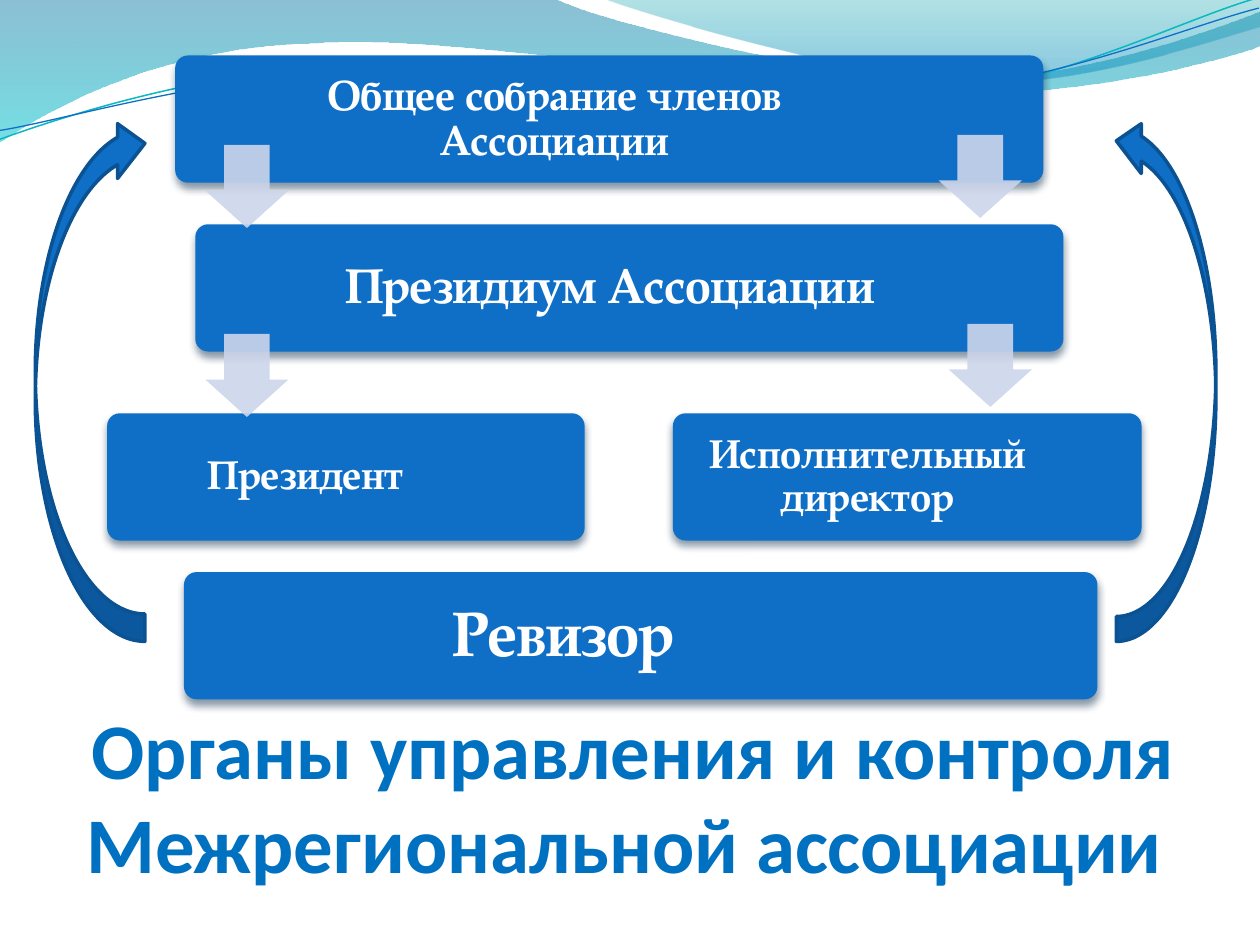
from lxml import etree
from pptx import Presentation
from pptx.dml.color import RGBColor
from pptx.enum.shapes import MSO_SHAPE
from pptx.enum.text import MSO_ANCHOR, PP_ALIGN
from pptx.oxml import parse_xml
from pptx.oxml.ns import qn
from pptx.util import Inches, Pt

ROUNDED = MSO_SHAPE.ROUNDED_RECTANGLE
DOWN_ARROW = MSO_SHAPE.DOWN_ARROW
CURVED_LEFT = MSO_SHAPE.CURVED_LEFT_ARROW
CURVED_RIGHT = MSO_SHAPE.CURVED_RIGHT_ARROW
CENTER = PP_ALIGN.CENTER
MIDDLE, BOTTOM = MSO_ANCHOR.MIDDLE, MSO_ANCHOR.BOTTOM

BLUE = RGBColor(0x0F, 0x6F, 0xC6)
DARK_BLUE = RGBColor(0x0B, 0x52, 0x92)
TITLE_BLUE = RGBColor(0x00, 0x70, 0xC0)
TURQUOISE = RGBColor(0x0A, 0xB8, 0xBF)
PALE_BLUE = RGBColor(0xCC, 0xD5, 0xEA)
WHITE = RGBColor(0xFF, 0xFF, 0xFF)
SHADOW = RGBColor(0x04, 0x27, 0x47)
WAVE_BLUE = RGBColor(0x00, 0x74, 0xA1)
WAVE_CYAN = RGBColor(0x00, 0xC6, 0xCF)
WAVE_TEAL = RGBColor(0x00, 0xA1, 0xA9)
WAVE_SKY = RGBColor(0x00, 0x8B, 0xBF)

DRAWING_NS = 'xmlns:a="http://schemas.openxmlformats.org/drawingml/2006/main"'


class SlideBuilder:
    body_font = "TeX Gyre Pagella"
    title_font = "Calibri"

    def __init__(self, slide):
        self.shapes = slide.shapes

    def outline(self, start, segments, closed):
        """Each segment is a line end (2 numbers) or a cubic curve (6 numbers)."""
        points = [(Inches(segment[i]), Inches(segment[i + 1]))
                  for segment in segments for i in range(0, len(segment), 2)]
        builder = self.shapes.build_freeform(Inches(start[0]), Inches(start[1]))
        builder.add_line_segments(points, close=closed)
        shape = builder.convert_to_shape()
        shape.shadow.inherit = False
        # Join each three points of a curve into one cubic segment
        lines = iter(list(shape.element.iter(qn("a:lnTo"))))
        for segment in segments:
            first = next(lines)
            if len(segment) == 6:
                first.tag = qn("a:cubicBezTo")
                for _ in range(2):
                    line = next(lines)
                    first.append(line[0])
                    line.getparent().remove(line)
        return shape

    def wave(self, start, segments, stops):
        shape = self.outline(start, segments, True)
        shape.line.fill.background()
        stop_xml = "".join(
            f'<a:gs pos="{position * 1000}"><a:srgbClr val="{color}">'
            f'<a:alpha val="{alpha * 1000}"/></a:srgbClr></a:gs>'
            for position, color, alpha in stops)
        gradient = parse_xml(f'<a:gradFill {DRAWING_NS}><a:gsLst>{stop_xml}</a:gsLst>'
                             '<a:lin ang="5400000" scaled="0"/></a:gradFill>')
        shape.element.spPr.find(qn("a:custGeom")).addnext(gradient)

    def thread(self, start, segments, color, width):
        shape = self.outline(start, segments, False)
        shape.rotation = 357.3
        shape.fill.background()
        shape.line.color.rgb = color
        shape.line.width = Pt(width)

    def preset(self, kind, box, color, adjustments=()):
        shape = self.shapes.add_shape(kind, *map(Inches, box))
        shape.shadow.inherit = False
        shape.fill.solid()
        shape.fill.fore_color.rgb = color
        shape.line.fill.background()
        for index, value in enumerate(adjustments):
            shape.adjustments[index] = value
        return shape

    def text(self, box, words, size, color, font, insets, anchor, spacing=None):
        frame = self.shapes.add_textbox(*map(Inches, box)).text_frame
        sides = ("margin_left", "margin_top", "margin_right", "margin_bottom")
        settings = {"word_wrap": True, "vertical_anchor": anchor}
        settings.update(zip(sides, map(Inches, insets)))
        for name, value in settings.items():
            setattr(frame, name, value)
        paragraph = frame.paragraphs[0]
        paragraph.alignment = CENTER
        paragraph.line_spacing = spacing
        run = paragraph.add_run()
        run.text = words
        for name, value in {"name": font, "size": Pt(size), "bold": True}.items():
            setattr(run.font, name, value)
        run.font.color.rgb = color

    def block(self, box, words, size, text_width, inset, indent=0):
        shape = self.preset(ROUNDED, box, BLUE, [0.1])
        effects = shape.element.spPr.find(qn("a:effectLst"))
        effects.append(parse_xml(
            f'<a:outerShdw {DRAWING_NS} blurRad="{Pt(4.5)}" dist="{Pt(3)}" dir="5400000" '
            f'rotWithShape="0"><a:srgbClr val="{SHADOW}"><a:alpha val="48000"/>'
            '</a:srgbClr></a:outerShdw>'))
        left, top, _, height = box
        self.text((left, top, text_width, height), words, size, WHITE, self.body_font,
                  (inset + indent, inset, inset, inset), MIDDLE, 0.9)

    def down_arrow(self, left, top):
        shape = self.preset(DOWN_ARROW, (left, top, 0.66, 0.66), PALE_BLUE, [0.55, 0.45])
        color = shape.element.spPr.find(qn("a:solidFill"))[0]
        etree.SubElement(color, qn("a:alpha")).set("val", "90000")

    def curved_arrow(self, kind, box):
        shape = self.preset(kind, box, BLUE)
        shape.rotation = 180
        shape.line.color.rgb = DARK_BLUE
        shape.line.width = Pt(2)


def main():
    presentation = Presentation()
    presentation.slide_width, presentation.slide_height = Inches(10), Inches(7.5)
    builder = SlideBuilder(presentation.slides.add_slide(presentation.slide_layouts[6]))

    # Waves along the top
    builder.wave((0, 0), [
        (4.4, -0.01), (4.76, 0.17, 6.64, 0.63, 7.58, 0.63),
        (8.53, 0.63, 9.58, 0.26, 10, 0.09), (10.01, 0.36),
        (9.83, 0.44, 8.7, 0.76, 7.46, 0.75), (6.22, 0.75, 3.82, 0.28, 2.57, 0.34),
        (1.29, 0.36, 0.46, 0.83, -0.01, 1.13),
    ], [(0, WAVE_BLUE, 45), (100, WAVE_CYAN, 55)])
    builder.wave((4.79, -0.01), [
        (5.09, 0.11, 6.82, 0.62, 7.69, 0.65), (8.56, 0.69, 9.61, 0.32, 10, 0.21), (10, 0),
    ], [(0, WAVE_TEAL, 30), (80, WAVE_SKY, 45)])

    # Thin threads, drawn level and then tilted
    builder.thread((-0.02, 0.87), [
        (0.47, 0.72, 1.58, 0.41, 2.77, 0.41), (3.96, 0.42, 5.91, 0.93, 7.12, 0.9),
        (8.32, 0.87, 9.39, 0.36, 10, 0.22),
    ], TURQUOISE, 0.85)
    builder.thread((-0.02, 0.8), [
        (0.46, 0.75, 1.64, 0.45, 2.83, 0.46), (4.03, 0.46, 5.96, 0.88, 7.16, 0.85),
        (8.35, 0.83, 9.42, 0.42, 10.01, 0.3),
    ], BLUE, 0.75)

    # Title
    builder.text((0.55, 5.64, 8.95, 1.42), "Органы управления и контроля Межрегиональной ассоциации ",
                 45, TITLE_BLUE, builder.title_font, (0, 0.05, 0, 0), BOTTOM)

    # Governing bodies: box, words, size, text width, inset, extra left indent
    for block in (
        ((1.39, 0.44, 6.89, 1.01), "Общее собрание членов Ассоциации", 24, 5.74, 0.08, 0.28),
        ((1.55, 1.78, 6.89, 1.01), "Президиум Ассоциации", 28, 5.72, 0.12, 0.86),
        ((5.34, 3.28, 3.72, 1.01), "Исполнительный директор", 23, 3.09, 0.1),
        ((0.85, 3.28, 3.79, 1.01), "Президент", 23, 3.15, 0.1),
        ((1.46, 4.54, 7.25, 1.01), "Ревизор", 36, 6.02, 0.15),
    ):
        builder.block(*block)

    # Arrows between levels
    for left, top in ((7.45, 1.07), (7.53, 2.57), (1.63, 1.15), (1.63, 2.65)):
        builder.down_arrow(left, top)

    # Control arrows at the sides
    builder.curved_arrow(CURVED_LEFT, (0.28, 0.92, 0.87, 4.17))
    builder.curved_arrow(CURVED_RIGHT, (8.86, 0.92, 0.79, 4.17))

    presentation.save("out.pptx")


if __name__ == "__main__":
    main()
